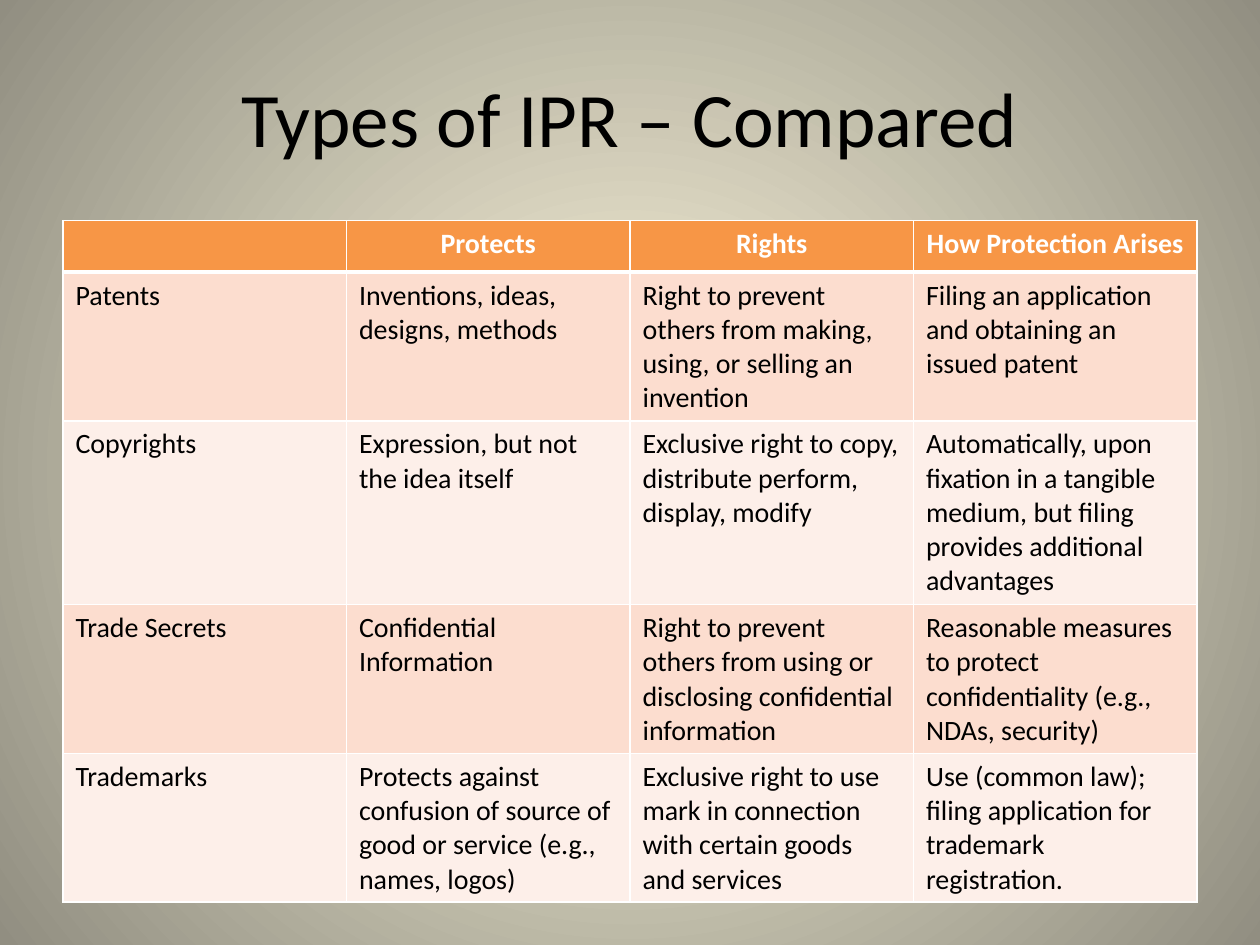
import dataclasses

import pptx
import pptx.dml.color
import pptx.enum.text
import pptx.oxml
import pptx.oxml.ns
import pptx.util
from pptx.util import Inches

ALIGN = pptx.enum.text.PP_ALIGN
ANCHOR = pptx.enum.text.MSO_ANCHOR


@dataclasses.dataclass(frozen=True)
class Theme:
    """Colours, font and type sizes of the slide."""
    font: str = "Calibri"
    title_size: int = 44
    table_size: int = 16
    ink: str = "000000"
    white: str = "FFFFFF"
    header: str = "F79646"
    bands: tuple = ("FCDDCF", "FDEFE9")
    glow: tuple = ("FCF7DD", "918E81")
    thin: int = 1
    thick: int = 3


THEME = Theme()
HEADINGS = ("", "Protects", "Rights", "How Protection Arises")
RIGHTS_TYPES = (
    ("Patents", "Inventions, ideas, designs, methods",
     "Right to prevent others from making, using, or selling an invention",
     "Filing an application and obtaining an issued patent"),
    ("Copyrights", "Expression, but not the idea itself",
     "Exclusive right to copy, distribute perform, display, modify",
     "Automatically, upon fixation in a tangible medium, but filing provides additional advantages"),
    ("Trade Secrets", "Confidential Information",
     "Right to prevent others from using or disclosing confidential information",
     "Reasonable measures to protect confidentiality (e.g., NDAs, security)"),
    ("Trademarks", "Protects against confusion of source of good or service (e.g., names, logos)",
     "Exclusive right to use mark in connection with certain goods and services",
     "Use (common law); filing application for trademark registration."),
)
ROW_HEIGHTS = (0.41, 1.18, 1.46, 1.18, 1.18)


def rgb(value):
    """Turn a hex string into a colour."""
    return pptx.dml.color.RGBColor.from_string(value)


def write_text(frame, text, *, size, color=THEME.ink, bold=False, align=ALIGN.LEFT):
    """Write one formatted paragraph into a text frame."""
    para = frame.paragraphs[0]
    para.alignment = align
    para.font.size = pptx.util.Pt(size)
    if text:
        span = para.add_run()
        span.text = text
        span.font.name = THEME.font
        span.font.size = pptx.util.Pt(size)
        span.font.bold = bold
        span.font.color.rgb = rgb(color)


def paint_background(page):
    """Fill the background with a gradient that spreads from the centre."""
    fill = page.background.fill
    fill.gradient()
    for stop, color in zip(fill.gradient_stops, THEME.glow):
        stop.color.rgb = rgb(color)
    gradient = page.element.find(".//" + pptx.oxml.ns.qn("a:gradFill"))
    gradient.remove(gradient.find(pptx.oxml.ns.qn("a:lin")))
    gradient.append(pptx.oxml.parse_xml(
        f'<a:path {pptx.oxml.ns.nsdecls("a")} path="circle">'
        '<a:fillToRect l="50000" t="50000" r="50000" b="50000"/></a:path>'))


def add_title(page, text):
    """Add the centred slide title."""
    box = page.shapes.add_textbox(Inches(0.5), Inches(0.3), Inches(9), Inches(1.25))
    box.text_frame.word_wrap = True
    box.text_frame.vertical_anchor = ANCHOR.MIDDLE
    write_text(box.text_frame, text, size=THEME.title_size, align=ALIGN.CENTER)


def style_cell(cell, fill, top, bottom):
    """Give a cell its white borders and its fill."""
    properties = cell._tc.get_or_add_tcPr()
    widths = {"L": THEME.thin, "R": THEME.thin, "T": top, "B": bottom}
    for side, width in widths.items():
        properties.append(pptx.oxml.parse_xml(
            f'<a:ln{side} {pptx.oxml.ns.nsdecls("a")} w="{pptx.util.Pt(width)}">'
            f'<a:solidFill><a:srgbClr val="{THEME.white}"/></a:solidFill></a:ln{side}>'))
    cell.fill.solid()
    cell.fill.fore_color.rgb = rgb(fill)


def add_comparison(page):
    """Add the table with a header row and banded body rows."""
    rows = (HEADINGS,) + RIGHTS_TYPES
    table = page.shapes.add_table(
        len(rows), len(HEADINGS), Inches(0.5), Inches(1.75),
        Inches(9), Inches(sum(ROW_HEIGHTS))).table
    table.horz_banding = False
    for index, (texts, height) in enumerate(zip(rows, ROW_HEIGHTS)):
        table.rows[index].height = Inches(height)
        is_header = index == 0
        fill = THEME.header if is_header else THEME.bands[(index - 1) % 2]
        top = THEME.thick if index == 1 else THEME.thin
        bottom = THEME.thick if is_header else THEME.thin
        for column, text in enumerate(texts):
            cell = table.cell(index, column)
            style_cell(cell, fill, top, bottom)
            write_text(cell.text_frame, text, size=THEME.table_size, bold=is_header,
                       color=THEME.white if is_header else THEME.ink,
                       align=ALIGN.CENTER if is_header else ALIGN.LEFT)


def main():
    """Build and save the slide."""
    deck = pptx.Presentation()
    deck.slide_width, deck.slide_height = Inches(10), Inches(7.5)
    page = deck.slides.add_slide(deck.slide_layouts[6])
    paint_background(page)
    add_title(page, "Types of IPR – Compared")
    add_comparison(page)
    deck.save("out.pptx")


if __name__ == "__main__":
    main()
